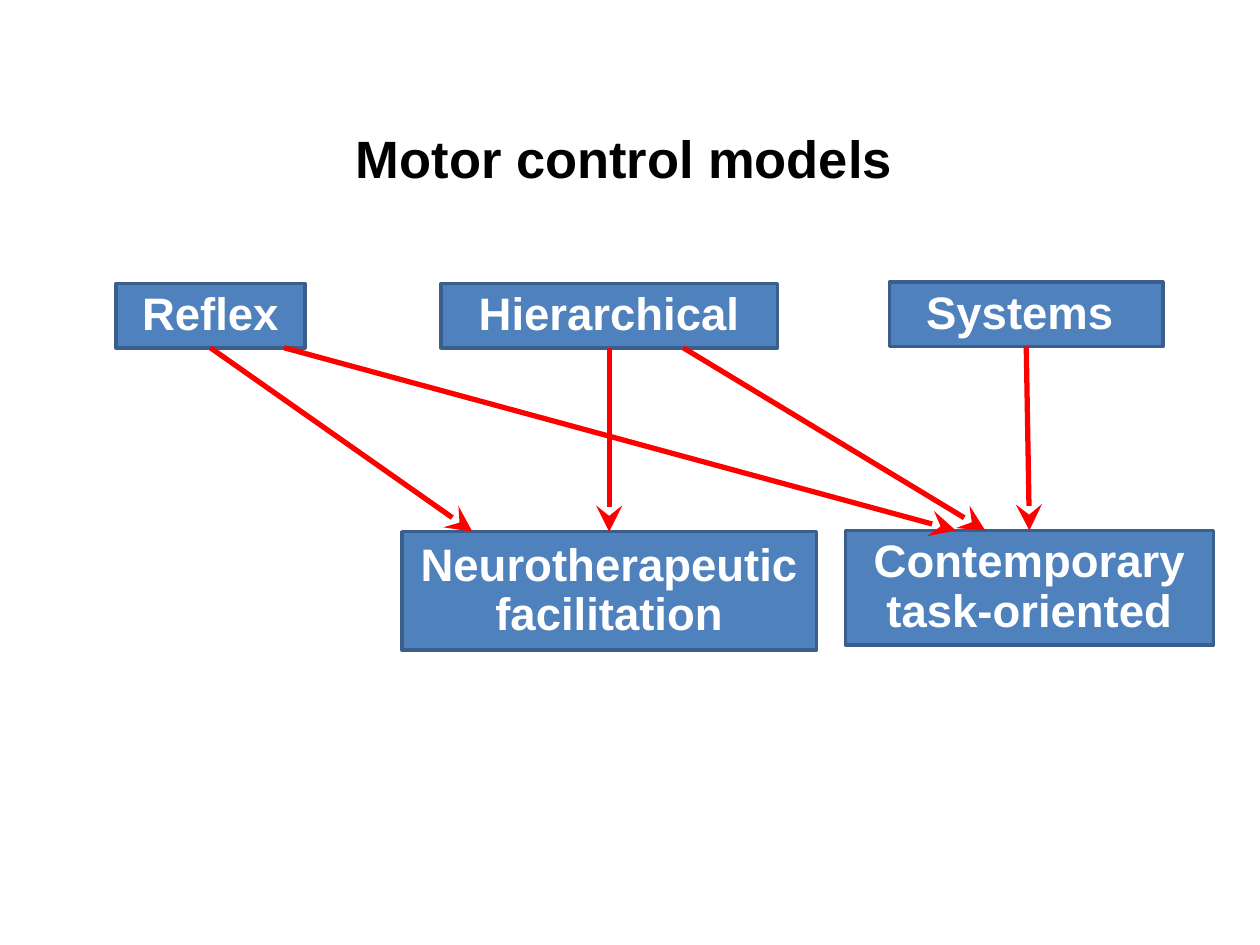
from dataclasses import dataclass

from lxml import etree
from pptx import Presentation
from pptx.dml.color import RGBColor
from pptx.enum.shapes import MSO_CONNECTOR, MSO_SHAPE
from pptx.enum.text import MSO_ANCHOR, PP_ALIGN
from pptx.oxml.ns import qn
from pptx.util import Inches, Pt


@dataclass(frozen=True)
class Theme:
    font: str = "Arial"
    title_size: int = 30
    box_size: int = 26
    title: str = "000000"
    box_text: str = "FFFFFF"
    box_fill: str = "4F81BD"
    box_line: str = "3A5F8C"
    arrow: str = "FF0000"
    box_weight: int = 2
    arrow_weight: int = 3


THEME = Theme()

# Box name: text, (left, top, width, height)
MODELS = {
    "reflex": ("Reflex", (0.92, 2.25, 1.5, 0.51)),
    "hierarchical": ("Hierarchical", (3.5, 2.25, 2.67, 0.51)),
    "systems": ("Systems ", (7.06, 2.24, 2.17, 0.51)),
}
APPROACHES = {
    "facilitation": ("Neurotherapeutic facilitation", (3.19, 4.22, 3.29, 0.94)),
    "task": ("Contemporary task-oriented", (6.71, 4.21, 2.92, 0.91)),
}
# Model, share of its width, approach, share of its width
LINKS = [
    ("reflex", 0.5, "facilitation", 0.17),
    ("reflex", 0.89, "task", 0.3),
    ("hierarchical", 0.5, "facilitation", 0.5),
    ("hierarchical", 0.72, "task", 0.38),
    ("systems", 0.5, "task", 0.5),
]


def write(tf, text, *, size, color):
    """Write one bold, centred paragraph."""
    tf.word_wrap = True
    tf.vertical_anchor = MSO_ANCHOR.MIDDLE
    p = tf.paragraphs[0]
    p.alignment = PP_ALIGN.CENTER
    p.line_spacing = 0.9
    r = p.add_run()
    r.text = text
    r.font.name = THEME.font
    r.font.size = Pt(size)
    r.font.bold = True
    r.font.color.rgb = RGBColor.from_string(color)


def add_title(s, text, box):
    sp = s.shapes.title
    sp.left, sp.top, sp.width, sp.height = map(Inches, box)
    write(sp.text_frame, text, size=THEME.title_size, color=THEME.title)


def add_boxes(s, items):
    """Draw a row of process boxes and return them by name."""
    boxes = {}
    for name, (text, box) in items.items():
        sp = s.shapes.add_shape(MSO_SHAPE.FLOWCHART_PROCESS, *map(Inches, box))
        sp.shadow.inherit = False
        sp.fill.solid()
        sp.fill.fore_color.rgb = RGBColor.from_string(THEME.box_fill)
        sp.line.color.rgb = RGBColor.from_string(THEME.box_line)
        sp.line.width = Pt(THEME.box_weight)
        write(sp.text_frame, text, size=THEME.box_size, color=THEME.box_text)
        boxes[name] = sp
    return boxes


def add_arrow(s, source, start, target, end):
    """Link the bottom edge of source to the top edge of target."""
    cx = s.shapes.add_connector(
        MSO_CONNECTOR.STRAIGHT,
        source.left + int(source.width * start), source.top + source.height,
        target.left + int(target.width * end), target.top,
    )
    cx.line.color.rgb = RGBColor.from_string(THEME.arrow)
    cx.line.width = Pt(THEME.arrow_weight)
    # Arrowhead and no shadow
    etree.SubElement(cx.line._get_or_add_ln(), qn("a:tailEnd"),
                     type="stealth", w="lg", len="lg")
    etree.SubElement(cx._element.spPr, qn("a:effectLst"))


def main():
    prs = Presentation()
    prs.slide_width, prs.slide_height = Inches(10), Inches(7.5)
    s = prs.slides.add_slide(prs.slide_layouts[5])

    add_title(s, "Motor control models", (2.08, 1, 5.75, 0.56))
    models = add_boxes(s, MODELS)
    approaches = add_boxes(s, APPROACHES)
    for model, start, approach, end in LINKS:
        add_arrow(s, models[model], start, approaches[approach], end)

    prs.save("out.pptx")


if __name__ == "__main__":
    main()
